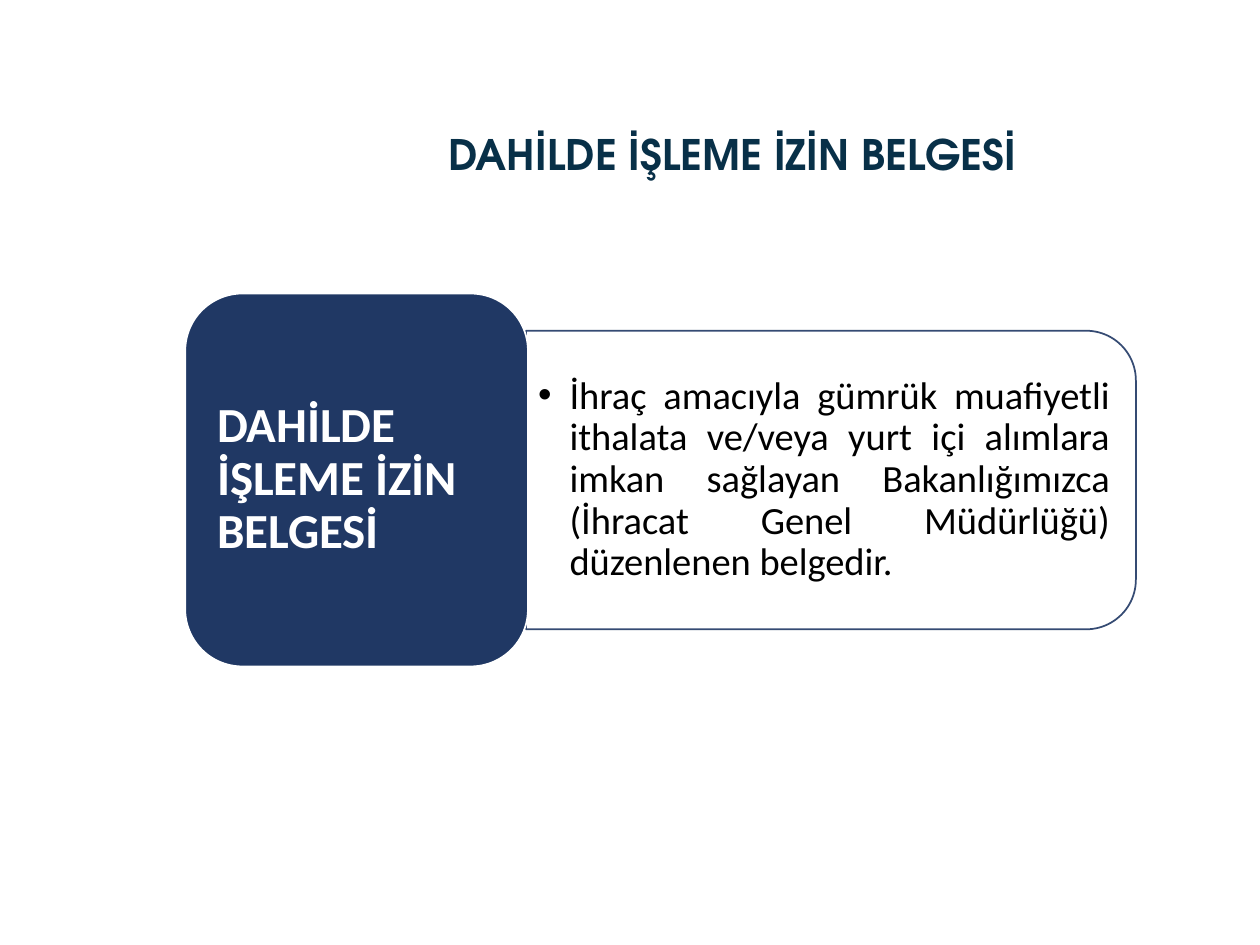
from dataclasses import dataclass

from lxml.etree import SubElement
from pptx import Presentation
from pptx.dml.color import RGBColor
from pptx.enum.shapes import MSO_SHAPE
from pptx.enum.text import MSO_ANCHOR, MSO_AUTO_SIZE, PP_ALIGN
from pptx.oxml.ns import qn
from pptx.util import Inches, Pt


@dataclass(frozen=True)
class Theme:
    heading_font: str = "TeX Gyre Adventor"
    body_font: str = "Calibri"
    heading: RGBColor = RGBColor(0x08, 0x30, 0x48)
    navy: RGBColor = RGBColor(0x20, 0x38, 0x64)
    white: RGBColor = RGBColor(0xFF, 0xFF, 0xFF)
    black: RGBColor = RGBColor(0, 0, 0)
    title_size: int = 24
    label_size: int = 28
    text_size: int = 22
    line_spacing: float = 0.9
    opacity: float = 0.9


THEME = Theme()


def place(shape, left, top, width, height):
    shape.left, shape.top = Inches(left), Inches(top)
    shape.width, shape.height = Inches(width), Inches(height)


def set_opacity(color_format_parent):
    """Apply the theme opacity to every solid colour inside an element."""
    for color in color_format_parent.iter(qn("a:srgbClr")):
        SubElement(color, qn("a:alpha"), val=str(round(THEME.opacity * 100000)))


def add_bullet(paragraph, indent):
    properties = paragraph._p.get_or_add_pPr()
    properties.set("marL", str(Inches(indent)))
    properties.set("indent", str(-Inches(indent)))
    SubElement(properties, qn("a:buFont"), typeface="Arial")
    SubElement(properties, qn("a:buChar"), char="•")


def write(shape, text, size, font, color, align, bold=False, inset=(0.1, 0.05)):
    frame = shape.text_frame
    frame.word_wrap = True
    frame.auto_size = MSO_AUTO_SIZE.NONE
    frame.vertical_anchor = MSO_ANCHOR.MIDDLE
    frame.margin_left = frame.margin_right = Inches(inset[0])
    frame.margin_top = frame.margin_bottom = Inches(inset[1])
    paragraph = frame.paragraphs[0]
    paragraph.alignment = align
    paragraph.line_spacing = THEME.line_spacing
    paragraph.space_before = Pt(0)
    run = paragraph.add_run()
    run.text = text
    run.font.size = Pt(size)
    run.font.name = font
    run.font.bold = bold
    run.font.color.rgb = color
    return paragraph


def add_block(slide, preset, box, fill, line):
    block = slide.shapes.add_shape(preset, *(Inches(value) for value in box))
    block.shadow.inherit = False
    block.fill.solid()
    block.fill.fore_color.rgb = fill
    block.line.color.rgb = line
    block.line.width = Pt(1)
    return block


def main():
    presentation = Presentation()
    presentation.slide_width, presentation.slide_height = Inches(10), Inches(7.5)
    slide = presentation.slides.add_slide(presentation.slide_layouts[1])
    title, definition = slide.placeholders

    # Heading
    place(title, 1.93, 0.52, 7.76, 1.45)
    write(title, "DAHİLDE İŞLEME İZİN BELGESİ", THEME.title_size,
          THEME.heading_font, THEME.heading, PP_ALIGN.CENTER, bold=True)

    # Definition panel, turned on its side and set behind its text
    panel = add_block(slide, MSO_SHAPE.ROUND_2_SAME_RECTANGLE,
                      (5.41, 1.39, 2.37, 4.84), THEME.white, THEME.navy)
    panel.rotation = 90
    set_opacity(panel._element.spPr)
    definition._element.addprevious(panel._element)

    # Definition text
    place(definition, 4.18, 2.74, 4.72, 2.14)
    add_bullet(definition.text_frame.paragraphs[0], 0.25)
    write(definition,
          "İhraç amacıyla gümrük muafiyetli ithalata ve/veya yurt içi alımlara "
          "imkan sağlayan Bakanlığımızca (İhracat Genel Müdürlüğü) düzenlenen "
          "belgedir.",
          THEME.text_size, THEME.body_font, THEME.black, PP_ALIGN.JUSTIFY,
          inset=(0.09, 0.05))

    # Term being defined
    term = add_block(slide, MSO_SHAPE.ROUNDED_RECTANGLE,
                     (1.47, 2.33, 2.72, 2.96), THEME.navy, THEME.white)
    write(term, "DAHİLDE İŞLEME İZİN BELGESİ", THEME.label_size,
          THEME.body_font, THEME.white, PP_ALIGN.LEFT, bold=True,
          inset=(0.12, 0.06))

    presentation.save("out.pptx")


if __name__ == "__main__":
    main()
